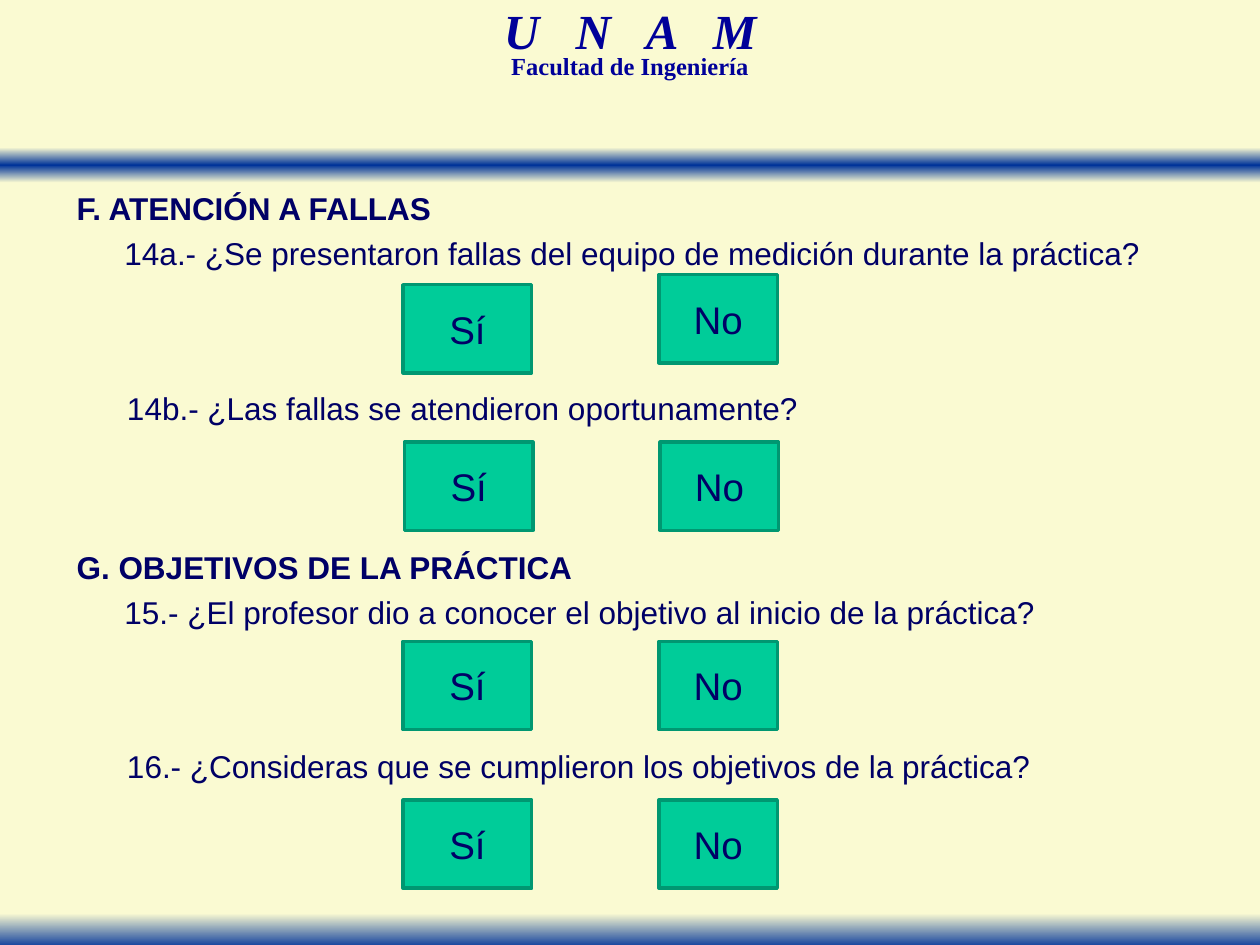
"""Build a survey slide on equipment failures and practice objectives."""
import copy
import pptx
import pptx.dml.color
import pptx.enum.shapes
import pptx.enum.text
import pptx.oxml.ns
import pptx.util

Inches, Pt = pptx.util.Inches, pptx.util.Pt
RGB = pptx.dml.color.RGBColor.from_string
ALIGN = pptx.enum.text.PP_ALIGN
RECT = pptx.enum.shapes.MSO_SHAPE.RECTANGLE

THEME = {
    "bg": RGB("FAFAD2"), "bar": RGB("003399"), "header": RGB("000099"),
    "text": RGB("000066"), "button": RGB("00CC99"), "border": RGB("009771"),
    "head_font": "Times New Roman", "body_font": "Arial",
    "school": 28, "faculty": 14, "body": 18, "answer": 22,
}


def add_run(p, text, size, font="body_font", color="text", bold=False, italic=False):
    r = p.add_run()
    r.text = text
    r.font.name, r.font.size = THEME[font], Pt(THEME[size])
    r.font.color.rgb = THEME[color]
    r.font.bold, r.font.italic = bold, italic
    return r


def add_box(s, x, y, w, h):
    tf = s.shapes.add_textbox(Inches(x), Inches(y), Inches(w), Inches(h)).text_frame
    tf.word_wrap = True
    return tf


prs = pptx.Presentation()
prs.slide_width, prs.slide_height = Inches(10), Inches(7.5)
s = prs.slides.add_slide(prs.slide_layouts[6])
s.background.fill.solid()
s.background.fill.fore_color.rgb = THEME["bg"]

for y, colors in [(1.17, ["bg", "bar", "bg"]), (7.25, ["bg", "bar"])]:
    sp = s.shapes.add_shape(RECT, 0, Inches(y), Inches(10), Inches(0.28))
    sp.shadow.inherit = False
    sp.line.fill.background()
    sp.fill.gradient()
    sp.fill.gradient_angle = 270
    stops = next(sp._element.spPr.iter(pptx.oxml.ns.qn("a:gsLst")))
    for _ in colors[2:]:
        stops.append(copy.deepcopy(stops[-1]))
    for i, (stop, color) in enumerate(zip(sp.fill.gradient_stops, colors)):
        stop.position = i / (len(colors) - 1)
        stop.color.rgb = THEME[color]

p = add_box(s, 3.04, 0.08, 3.92, 0.43).paragraphs[0]
p.alignment, p.line_spacing = ALIGN.CENTER, 0.7
r = add_run(p, "U N A ", "school", "head_font", "header", True, True)
r.font._element.set("spc", "700")
add_run(p, "M", "school", "head_font", "header", True, True)

p = add_box(s, 3.21, 0.42, 3.58, 0.26).paragraphs[0]
p.alignment, p.line_spacing = ALIGN.CENTER, 0.7
add_run(p, "Facultad de Ingeniería", "faculty", "head_font", "header", True)

sections = [
    (1.45, "F. ATENCIÓN A FALLAS",
     "14a.- ¿Se presentaron fallas del equipo de medición durante la práctica?"),
    (4.3, "G. OBJETIVOS DE LA PRÁCTICA",
     "15.- ¿El profesor dio a conocer el objetivo al inicio de la práctica?"),
]
for y, heading, question in sections:
    tf = add_box(s, 0.51, y, 9, 0.94)
    add_run(tf.paragraphs[0], heading, "body", bold=True)
    p = tf.add_paragraph()
    p.space_before = Pt(4.3)
    p._p.get_or_add_pPr().set("marL", str(Inches(0.38)))
    add_run(p, question, "body")

for y, question in [
    (3.04, "14b.- ¿Las fallas se atendieron oportunamente?"),
    (5.88, "16.- ¿Consideras que se cumplieron los objetivos de la práctica?"),
]:
    add_run(add_box(s, 0.91, y, 7.97, 0.4).paragraphs[0], question, "body")

for yes_x, yes_y, no_x, no_y in [
    (3.2, 2.26, 5.23, 2.18), (3.21, 3.51, 5.24, 3.51),
    (3.2, 5.09, 5.23, 5.09), (3.2, 6.35, 5.23, 6.35),
]:
    for answer, x, y, w in [("Sí", yes_x, yes_y, 1.02), ("No", no_x, no_y, 0.94)]:
        sp = s.shapes.add_shape(RECT, Inches(x), Inches(y), Inches(w), Inches(0.7))
        sp.shadow.inherit = False
        sp.fill.solid()
        sp.fill.fore_color.rgb = THEME["button"]
        sp.line.color.rgb, sp.line.width = THEME["border"], Pt(2)
        tf = sp.text_frame
        tf.vertical_anchor = pptx.enum.text.MSO_ANCHOR.MIDDLE
        tf.paragraphs[0].alignment = ALIGN.CENTER
        add_run(tf.paragraphs[0], answer, "answer")

prs.save("out.pptx")
